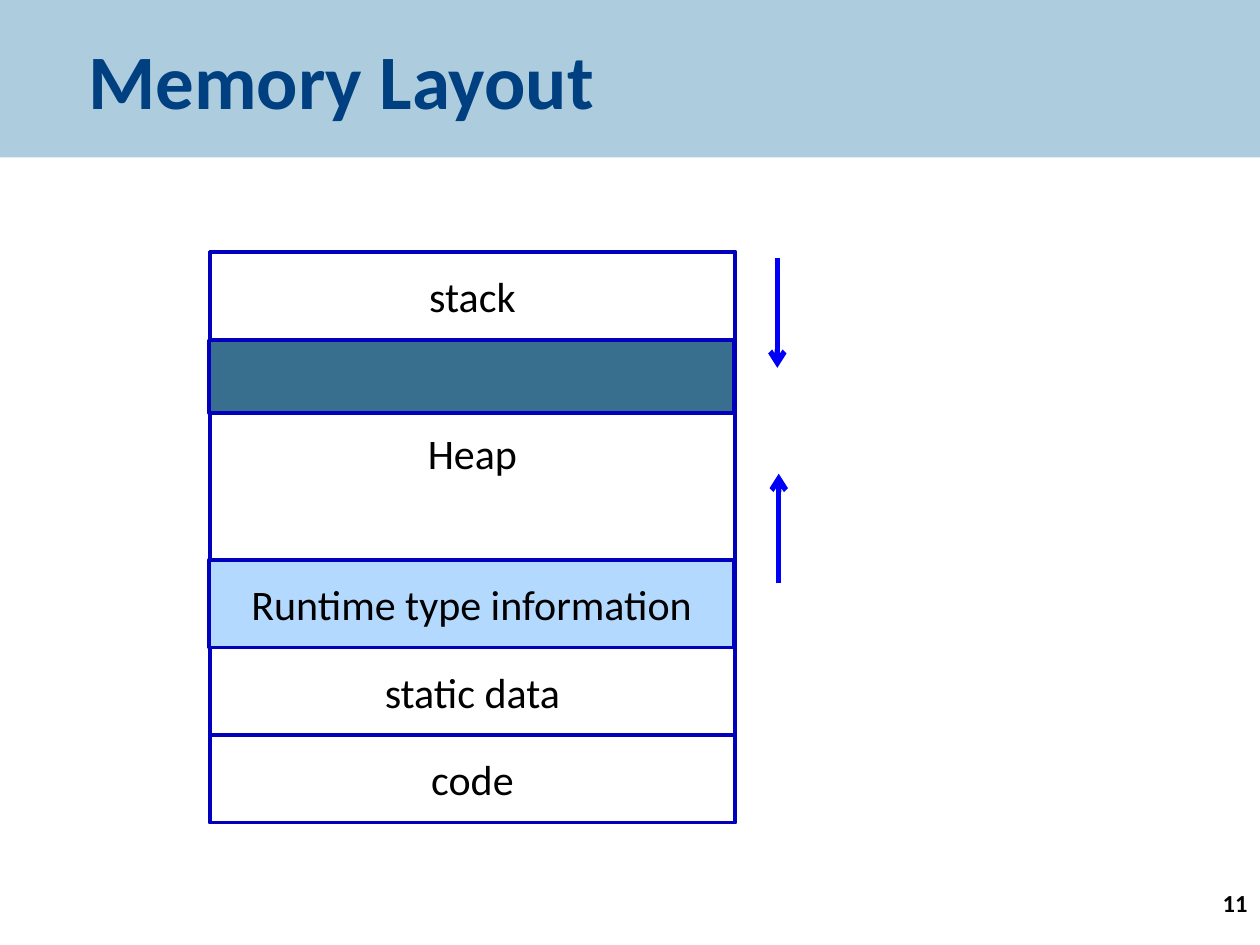
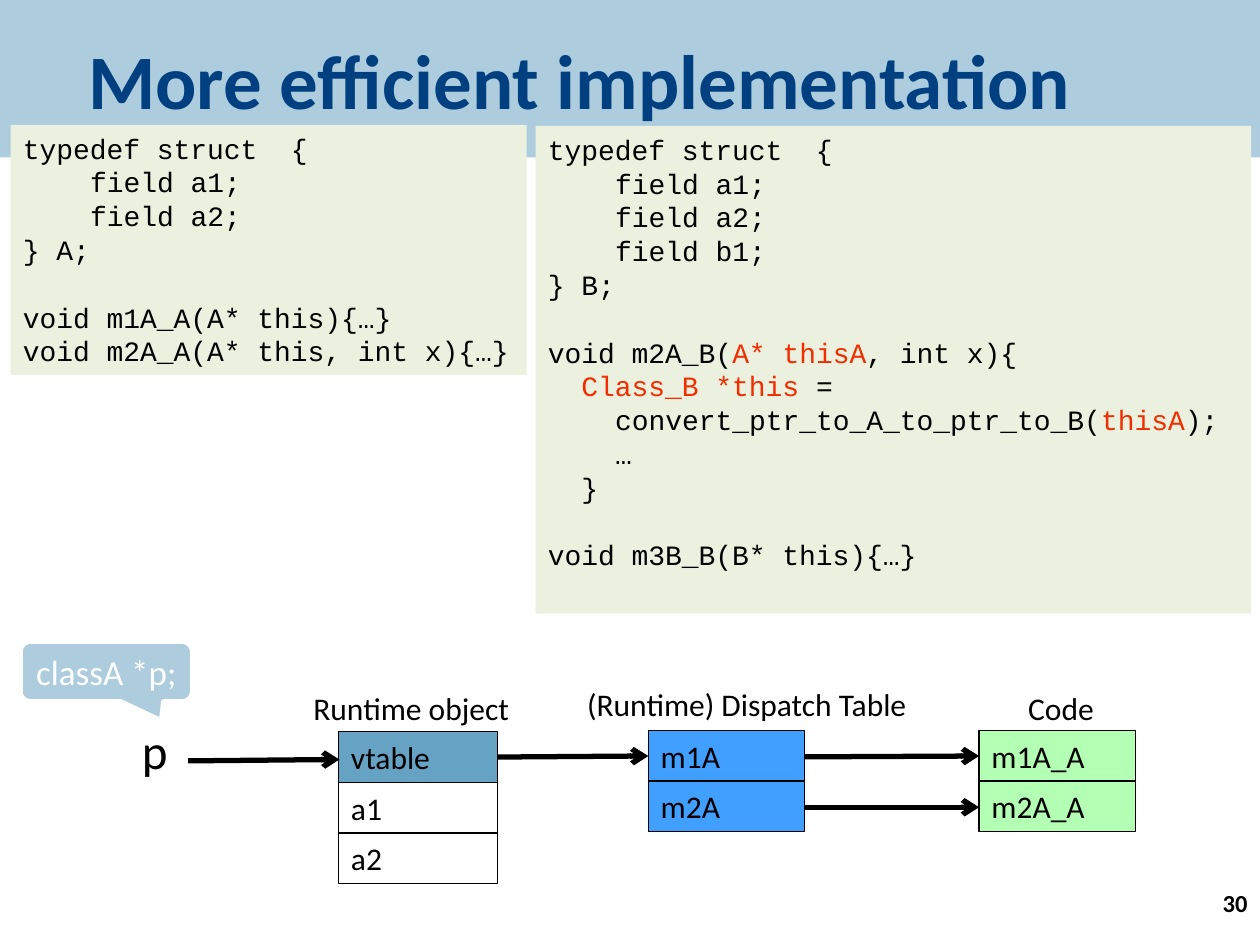
import pptx
import pptx.dml.color
import pptx.enum.shapes
import pptx.enum.text
import pptx.oxml
import pptx.oxml.ns
import pptx.util

Pt = pptx.util.Pt
RGBColor = pptx.dml.color.RGBColor
PRESET = pptx.enum.shapes.MSO_SHAPE
ALIGN = pptx.enum.text.PP_ALIGN
ANCHOR = pptx.enum.text.MSO_ANCHOR

BAND = RGBColor(0xAD, 0xCD, 0xDF)
NAVY = RGBColor(0x00, 0x40, 0x80)
BLACK = RGBColor(0x00, 0x00, 0x00)
WHITE = RGBColor(0xFF, 0xFF, 0xFF)
SEGMENT_LINE = RGBColor(0x00, 0x00, 0xBD)
GROWTH_BLUE = RGBColor(0x00, 0x00, 0xF9)
FREE_SPACE = RGBColor(0x38, 0x6F, 0x8E)
TYPE_INFO = RGBColor(0xB3, 0xD9, 0xFF)
CODE_PAPER = RGBColor(0xEB, 0xF1, 0xDE)
CODE_RED = RGBColor(0xF0, 0x2E, 0x00)
VTABLE_BLUE = RGBColor(0x66, 0xA2, 0xC3)
DISPATCH_BLUE = RGBColor(0x40, 0x9F, 0xFF)
METHOD_GREEN = RGBColor(0xB3, 0xFF, 0xB3)

BODY_FONT = "Calibri"
CODE_FONT = "Courier New"
CODE_SIZE = 16
CODE_CHAR = 9.6
CODE_LEADING = 19.3


def add_box(slide, place, text="", fill=None, line=None, weight=0.75, size=18, color=BLACK,
            bold=False, align=ALIGN.LEFT, anchor=ANCHOR.TOP, preset=PRESET.RECTANGLE):
    """Add a shape at place (left, top, width, height in points); no fill or line unless given."""
    box = slide.shapes.add_shape(preset, *map(Pt, place))
    box.shadow.inherit = False
    if fill is None:
        box.fill.background()
    else:
        box.fill.solid()
        box.fill.fore_color.rgb = fill
    if line is None:
        box.line.fill.background()
    else:
        box.line.color.rgb = line
        box.line.width = Pt(weight)
    frame = box.text_frame
    frame.word_wrap = True
    frame.vertical_anchor = anchor
    frame.text = text
    frame.paragraphs[0].alignment = align
    for run in frame.paragraphs[0].runs:
        run.font.name = BODY_FONT
        run.font.size = Pt(size)
        run.font.bold = bold
        run.font.color.rgb = color
    return box


def add_arrow(slide, start, end, color):
    arrow = slide.shapes.add_connector(
        pptx.enum.shapes.MSO_CONNECTOR.STRAIGHT, *map(Pt, start + end))
    arrow.line.color.rgb = color
    arrow.line.width = Pt(3)
    properties = arrow._element.spPr
    head = pptx.oxml.parse_xml(f'<a:tailEnd {pptx.oxml.ns.nsdecls("a")} type="arrow"/>')
    properties.find(pptx.oxml.ns.qn("a:ln")).append(head)
    properties.append(pptx.oxml.parse_xml(f'<a:effectLst {pptx.oxml.ns.nsdecls("a")}/>'))


deck = pptx.Presentation()
deck.slide_width, deck.slide_height = Pt(720), Pt(540)

# Title band and page number
slides = []
for heading, page in (("Memory Layout", "11"), ("More efficient implementation", "30")):
    slide = deck.slides.add_slide(deck.slide_layouts[5])
    title = slide.shapes.title
    title.left, title.top, title.width, title.height = Pt(0), Pt(0), Pt(720), Pt(90)
    title.fill.solid()
    title.fill.fore_color.rgb = BAND
    title.text_frame.text = heading
    title.text_frame.vertical_anchor = ANCHOR.MIDDLE
    heading_line = title.text_frame.paragraphs[0]
    heading_line.alignment = ALIGN.LEFT
    heading_line._p.get_or_add_pPr().set("marL", str(Pt(43.2)))
    heading_font = heading_line.runs[0].font
    heading_font.name, heading_font.size, heading_font.bold = BODY_FONT, Pt(44), True
    heading_font.color.rgb = NAVY
    add_box(slide, (570, 504, 150, 36), page, size=14, bold=True, align=ALIGN.RIGHT)
    slides.append(slide)
layout_slide, dispatch_slide = slides

# Memory layout: segments from back to front
add_arrow(layout_slide, (444.2, 147.6), (444.2, 210.2), GROWTH_BLUE)
add_arrow(layout_slide, (445, 333.4), (445, 270.7), GROWTH_BLUE)
for text, left, top, height, fill in (
    ("", 120, 144, 326, None),
    ("Heap", 120, 236, 134, None),
    ("stack", 120, 144, 50, None),
    ("code", 120, 420, 50, None),
    ("static data", 120, 370, 50, None),
    ("Runtime type information", 119.5, 320, 50, TYPE_INFO),
    ("", 119.5, 194.5, 41.5, FREE_SPACE),
):
    segment = add_box(layout_slide, (left, top, 300, height), text, fill, SEGMENT_LINE,
                      weight=2, size=24, align=ALIGN.CENTER, anchor=ANCHOR.MIDDLE)
    if text == "Heap":
        segment.text_frame.vertical_anchor = ANCHOR.TOP
        segment.text_frame.margin_top = Pt(8.5)

# Code listings: text between bars is red, an empty entry adds a line of space
struct_a = [
    "typedef struct  {",
    "    field a1;",
    "    field a2;",
    "} A;",
    "",
    "void m1A_A(A* this){…}",
    "void m2A_A(A* this, int x){…}",
]
struct_b = [
    "typedef struct  {",
    "    field a1;",
    "    field a2;",
    "    field b1;",
    "} B;",
    "",
    "void m2A_B(|A* thisA|, int x){",
    "  |Class_B *this |=",
    "    convert_ptr_to_A_to_ptr_to_B(|thisA|);",
    "    …",
    "  }",
    "",
    "void m3B_B(B* this){…}",
]
for place, listing in (((6, 71.3, 295, 143), struct_a), ((306, 72, 409, 278.6), struct_b)):
    frame = add_box(dispatch_slide, place, fill=CODE_PAPER).text_frame
    gap = 0
    for number, code_line in enumerate(listing):
        if not code_line:
            gap = CODE_LEADING
            continue
        statement = code_line.lstrip()
        paragraph = frame.add_paragraph() if number else frame.paragraphs[0]
        paragraph.alignment = ALIGN.LEFT
        paragraph.line_spacing = Pt(CODE_LEADING)
        paragraph.space_before = Pt(gap)
        indent = Pt(CODE_CHAR * (len(code_line) - len(statement)))
        paragraph._p.get_or_add_pPr().set("marL", str(indent))
        gap = 0
        for part, words in enumerate(statement.split("|")):
            if words:
                run = paragraph.add_run()
                run.text = words
                run.font.name = CODE_FONT
                run.font.size = Pt(CODE_SIZE)
                run.font.color.rgb = CODE_RED if part % 2 else BLACK

# Object, dispatch table and code: caption above stacked cells
ROW = 28.9
for caption, caption_place, align, left, top, width, cells in (
    ("Runtime object", (172, 390, 139, ROW), ALIGN.LEFT, 193.5, 418.2, 91,
     (("vtable", VTABLE_BLUE), ("a1", None), ("a2", None))),
    ("(Runtime) Dispatch Table", (299, 388, 255.5, ROW), ALIGN.CENTER, 370.5, 417.5, 89.3,
     (("m1A", DISPATCH_BLUE), ("m2A", DISPATCH_BLUE))),
    ("Code", (545.8, 390, 121, ROW), ALIGN.CENTER, 559.5, 417.5, 89.3,
     (("m1A_A", METHOD_GREEN), ("m2A_A", METHOD_GREEN))),
):
    add_box(dispatch_slide, caption_place, caption, align=align)
    for row, (entry, fill) in enumerate(cells):
        add_box(dispatch_slide, (left, top + row * ROW, width, ROW), entry, fill, BLACK)

for start, end in (
    ((107.5, 434.8), (194, 434)),
    ((284.5, 432.6), (370.5, 432)),
    ((459.8, 432.5), (559.5, 432)),
    ((459.8, 461.3), (559.5, 461.3)),
):
    add_arrow(dispatch_slide, start, end, BLACK)

add_box(dispatch_slide, (74, 408.3, 39, 30), "p", size=28)
declaration = add_box(dispatch_slide, (11.5, 366.5, 98.5, 34.5), "classA *p;", BAND, WHITE,
                      weight=3, size=20, color=WHITE, align=ALIGN.CENTER,
                      anchor=ANCHOR.MIDDLE, preset=PRESET.ROUNDED_RECTANGULAR_CALLOUT)
declaration.text_frame.word_wrap = False
for index, amount in enumerate((0.32, 0.82, 0.17)):
    declaration.adjustments[index] = amount

deck.save("out.pptx")
